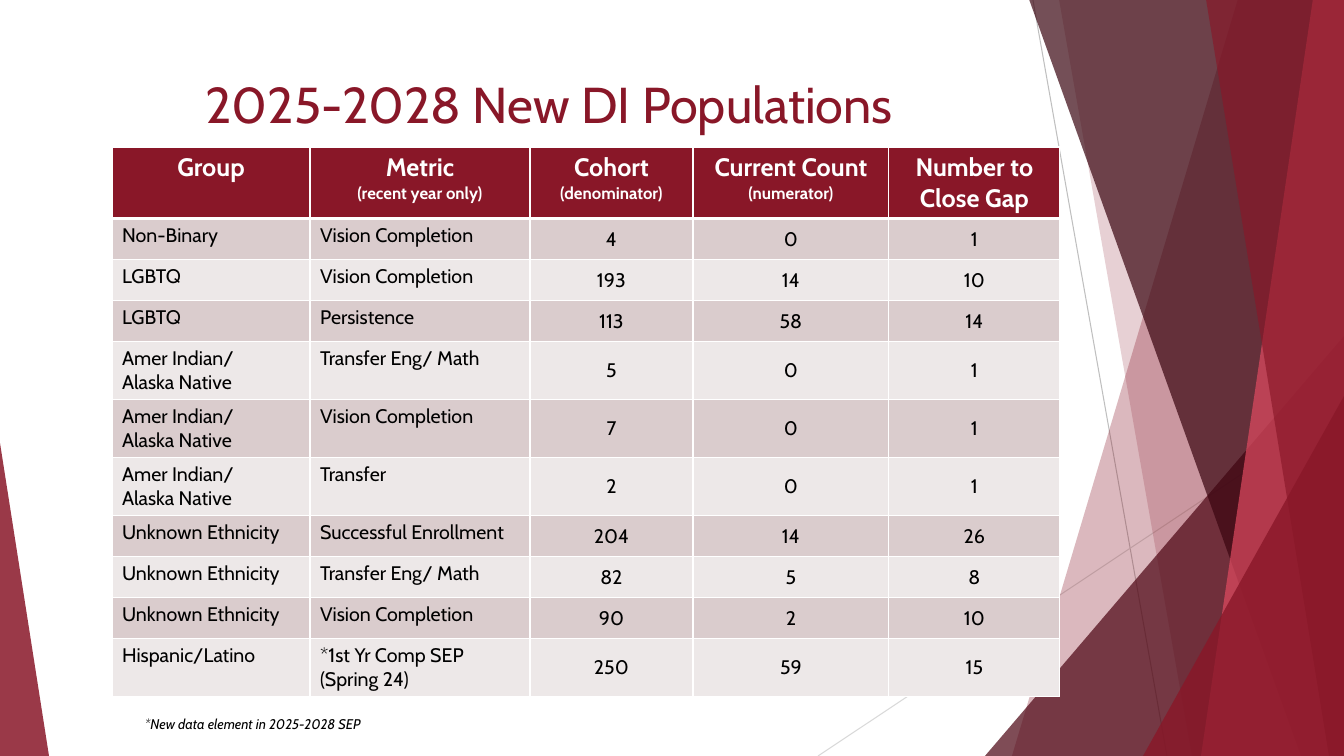
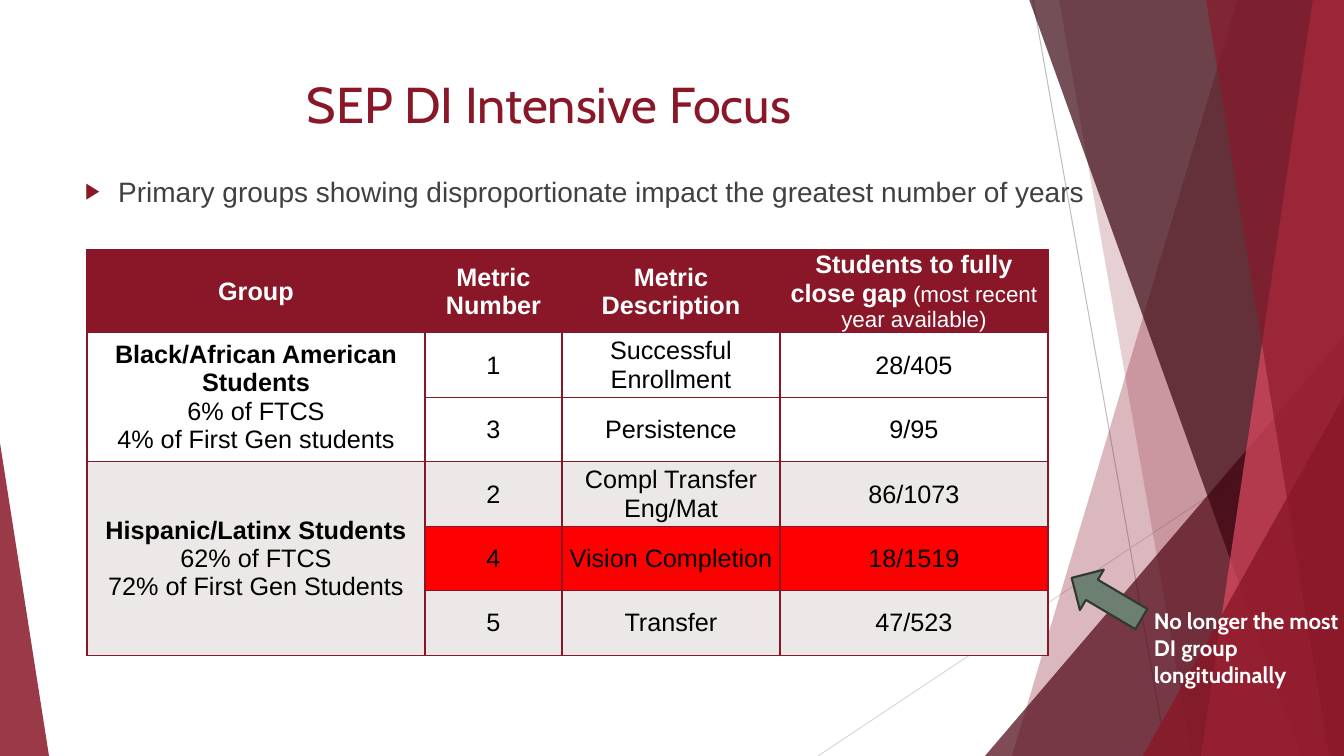
"""Build two slides on the 2025-2028 disproportionate impact (DI) populations."""
import dataclasses

import pptx
import pptx.dml.color
import pptx.enum.shapes
import pptx.enum.text
import pptx.oxml
import pptx.oxml.ns
import pptx.util

WIDTH, HEIGHT = 1344, 756
PX = 12192000 / WIDTH
COLORS = {
    "maroon": "891728", "wine": "4E0715", "plum": "3A0510", "rose": "E14B61",
    "white": "FFFFFF", "black": "000000", "body": "404040", "alert": "FF0000",
    "band_dark": "DACCCD", "band_light": "EDE8E8", "line": "BFBFBF", "pale_line": "D9D9D9",
    "arrow": "6D7F71", "arrow_edge": "303832",
}
CENTER = pptx.enum.text.PP_ALIGN.CENTER
LEFT = pptx.enum.text.PP_ALIGN.LEFT
TOP = pptx.enum.text.MSO_ANCHOR.TOP
MIDDLE = pptx.enum.text.MSO_ANCHOR.MIDDLE


@dataclasses.dataclass(frozen=True)
class Style:
    """Character formatting of a run."""
    size: int
    color: str = "black"
    bold: bool = False
    italic: bool = False
    font: str = "Cabin"


TITLE = Style(36, "maroon")
BULLET = Style(20, "body", font="Arial")
HEADER = Style(18, "white", bold=True)
HEADER_NOTE = dataclasses.replace(HEADER, size=12)
CELL = Style(14)
FOCUS_HEADER = dataclasses.replace(HEADER, font="Arial")
FOCUS_NOTE = Style(16, "white", font="Arial")
FOCUS_CELL = Style(18, font="Arial")
FOCUS_GROUP = dataclasses.replace(FOCUS_CELL, bold=True)

POPULATION_HEADERS = [
    ("Group", None), ("Metric", "(recent year only)"), ("Cohort", "(denominator)"),
    ("Current Count", "(numerator)"), ("Number to Close Gap", None),
]
POPULATIONS = [
    ("Non-Binary", "Vision Completion", 4, 0, 1),
    ("LGBTQ", "Vision Completion", 193, 14, 10),
    ("LGBTQ", "Persistence", 113, 58, 14),
    ("Amer Indian/\nAlaska Native", "Transfer Eng/ Math", 5, 0, 1),
    ("Amer Indian/\nAlaska Native", "Vision Completion", 7, 0, 1),
    ("Amer Indian/\nAlaska Native", "Transfer", 2, 0, 1),
    ("Unknown Ethnicity", "Successful Enrollment", 204, 14, 26),
    ("Unknown Ethnicity", "Transfer Eng/ Math", 82, 5, 8),
    ("Unknown Ethnicity", "Vision Completion", 90, 2, 10),
    ("Hispanic/Latino", "*1st Yr Comp SEP (Spring 24)", 250, 59, 15),
]
FOCUS_HEADERS = ["Group", "Metric Number", "Metric Description", "Students to fully close gap"]
FOCUS_GROUPS = [
    ("Black/African American Students", "6% of FTCS\n4% of First Gen students", None, [
        ("1", "Successful Enrollment", "28/405"),
        ("3", "Persistence", "9/95"),
    ]),
    ("Hispanic/Latinx Students", "62% of FTCS\n72% of First Gen Students", "band_light", [
        ("2", "Compl Transfer Eng/Mat", "86/1073"),
        ("4", "Vision Completion", "18/1519"),
        ("5", "Transfer", "47/523"),
    ]),
]


def px(value):
    """Turn px into EMU."""
    return pptx.util.Emu(round(value * PX))


def box(*values):
    """Turn a left, top, width, height box into EMU."""
    return [px(value) for value in values]


def rgb(name):
    """Look up a colour."""
    return pptx.dml.color.RGBColor.from_string(COLORS[name])


def sub_element(parent, tag, **attributes):
    """Append a DrawingML child."""
    child = pptx.oxml.parse_xml(f"<{tag} {pptx.oxml.ns.nsdecls('a')}/>")
    for name, value in attributes.items():
        child.set(name, str(value))
    parent.append(child)
    return child


def write_paragraph(paragraph, runs, alignment=LEFT):
    """Write styled runs, turning newlines into line breaks."""
    paragraph.alignment = alignment
    for text, style in runs:
        for index, line in enumerate(text.split("\n")):
            if index:
                paragraph.add_line_break()
            if not line:
                continue
            run = paragraph.add_run()
            run.text = line
            run.font.name = style.font
            run.font.size = pptx.util.Pt(style.size)
            run.font.bold = style.bold
            run.font.italic = style.italic
            run.font.color.rgb = rgb(style.color)


def paint(shape, color, opacity=100):
    """Give a shape a flat fill without line or shadow."""
    shape.shadow.inherit = False
    shape.fill.solid()
    shape.fill.fore_color.rgb = rgb(color)
    shape.line.fill.background()
    if opacity < 100:
        fill = shape.element.xpath("./p:spPr/a:solidFill/a:srgbClr")[0]
        sub_element(fill, "a:alpha", val=opacity * 1000)
    return shape


def add_line(slide, start, end, color):
    """Add a thin straight line."""
    line = slide.shapes.add_connector(
        pptx.enum.shapes.MSO_CONNECTOR.STRAIGHT, *box(*start, *end))
    line.line.color.rgb = rgb(color)
    line.line.width = pptx.util.Pt(0.75)
    sub_element(line.element.spPr, "a:effectLst")
    return line


def add_band(slide, points, color, opacity):
    """Add a translucent polygon."""
    builder = slide.shapes.build_freeform(*points[0], scale=PX)
    builder.add_line_segments(points[1:], close=True)
    return paint(builder.convert_to_shape(), color, opacity)


def add_triangle(slide, bounds, apex, color, opacity):
    """Add a translucent triangle with its apex at a share of its width."""
    triangle = slide.shapes.add_shape(
        pptx.enum.shapes.MSO_SHAPE.ISOSCELES_TRIANGLE, *box(*bounds))
    triangle.adjustments[0] = apex
    return paint(triangle, color, opacity)


def decorate_master(presentation, slide):
    """Draw the shared facets and move them behind the master's placeholders."""
    def edge_band(top, bottom, color, opacity):
        points = [(top, -1), (WIDTH, -1), (WIDTH, HEIGHT), (bottom, HEIGHT)]
        return add_band(slide, points, color, opacity)

    facets = [
        add_line(slide, (1033, 0), (1167, HEIGHT), "line"),
        add_line(slide, (WIDTH, 406), (818, HEIGHT), "pale_line"),
        edge_band(1238, 1012, "maroon", 30),
        edge_band(1059, 1192, "maroon", 20),
        add_triangle(slide, (985, 336, 359, 420), 1, "wine", 72),
        edge_band(1029, 1301, "plum", 70),
        edge_band(1313, 1201, "rose", 70),
        edge_band(1206, 1329, "maroon", 65),
        add_triangle(slide, (1143, 396, 201, 360), 1, "maroon", 80),
        add_triangle(slide, (0, 443, 49, 313), 0, "maroon", 85),
    ]
    tree = presentation.slide_master.shapes.element
    for index, facet in enumerate(facets):
        facet.element.xpath(".//p:cNvPr")[0].set("id", str(100 + index))
        tree.insert(2 + index, facet.element)


def place_text(shape, bounds, runs, alignment=LEFT):
    """Position a text shape and write its only paragraph."""
    shape.left, shape.top, shape.width, shape.height = box(*bounds)
    frame = shape.text_frame
    frame.word_wrap = True
    frame.auto_size = pptx.enum.text.MSO_AUTO_SIZE.NONE
    frame.vertical_anchor = TOP
    write_paragraph(frame.paragraphs[0], runs, alignment)


def add_note(slide, bounds, text, style):
    """Add a wrapped text box."""
    place_text(slide.shapes.add_textbox(*box(*bounds)), bounds, [(text, style)])


def set_title(slide, text):
    """Fill the title placeholder."""
    place_text(slide.shapes.title, (75, 68, 948, 145), [(text, TITLE)], CENTER)


def set_bullet(placeholder, bounds, text):
    """Fill the body placeholder with one arrow-bulleted line."""
    paragraph = placeholder.text_frame.paragraphs[0]
    properties = paragraph._p.get_or_add_pPr()
    properties.set("marL", str(px(33)))
    properties.set("indent", str(px(-33)))
    sub_element(sub_element(properties, "a:buClr"), "a:srgbClr", val=COLORS["maroon"])
    sub_element(properties, "a:buSzPct", val=80000)
    sub_element(properties, "a:buFont", typeface="Arial")
    sub_element(properties, "a:buChar", char="▶")
    place_text(placeholder, bounds, [(text, BULLET)])
    paragraph.space_before = pptx.util.Pt(0)


def add_table(slide, left, top, columns, rows):
    """Add an unbanded table from column widths and row heights."""
    frame = slide.shapes.add_table(
        len(rows), len(columns), *box(left, top, sum(columns), sum(rows)))
    table = frame.table
    table.first_row = table.horz_banding = False
    for column, width in zip(table.columns, columns):
        column.width = px(width)
    for row, height in zip(table.rows, rows):
        row.height = px(height)
    return table


def format_cell(cell, fill, border, top=1, bottom=1):
    """Set the borders and the fill of a cell."""
    properties = cell._tc.get_or_add_tcPr()
    for side, width in (("L", 1), ("R", 1), ("T", top), ("B", bottom)):
        line = sub_element(properties, f"a:ln{side}", w=pptx.util.Pt(width))
        sub_element(sub_element(line, "a:solidFill"), "a:srgbClr", val=COLORS[border])
    if fill:
        cell.fill.solid()
        cell.fill.fore_color.rgb = rgb(fill)
    else:
        cell.fill.background()


def write_cell(cell, paragraphs, alignment=CENTER, anchor=MIDDLE):
    """Write paragraphs of runs into a cell."""
    cell.vertical_anchor = anchor
    frame = cell.text_frame
    for index, runs in enumerate(paragraphs):
        paragraph = frame.add_paragraph() if index else frame.paragraphs[0]
        write_paragraph(paragraph, runs, alignment)


def add_population_table(slide):
    """Add the table of new populations."""
    heights = [70] + [41] * 3 + [58] * 3 + [41] * 3 + [58]
    table = add_table(slide, 112, 147, [198, 220, 163, 196, 171], heights)
    for column, (label, note) in enumerate(POPULATION_HEADERS):
        cell = table.cell(0, column)
        format_cell(cell, "maroon", "white", bottom=3)
        paragraphs = [[(label, HEADER)]] + ([[(note, HEADER_NOTE)]] if note else [])
        write_cell(cell, paragraphs, anchor=TOP)
    for row, values in enumerate(POPULATIONS, 1):
        for column, value in enumerate(values):
            cell = table.cell(row, column)
            format_cell(cell, "band_dark" if row % 2 else "band_light", "white",
                        top=3 if row == 1 else 1)
            placing = (LEFT, TOP) if column < 2 else (CENTER, MIDDLE)
            write_cell(cell, [[(line, CELL)] for line in str(value).split("\n")], *placing)


def add_focus_table(slide):
    """Add the table of groups in intensive focus."""
    table = add_table(slide, 87, 250, [338, 137, 218, 268], [81, 65, 64, 65, 64, 65])

    def fill_cell(row, column, runs, fill):
        cell = table.cell(row, column)
        cell.margin_left = cell.margin_right = cell.margin_top = px(1)
        cell.margin_bottom = 0
        format_cell(cell, fill, "maroon")
        write_cell(cell, [runs])

    for column, label in enumerate(FOCUS_HEADERS):
        runs = [(label, FOCUS_HEADER)]
        if column == 3:
            runs.append((" (most recent year available)", FOCUS_NOTE))
        fill_cell(0, column, runs, "maroon")
    first = 1
    for group, shares, fill, metrics in FOCUS_GROUPS:
        last = first + len(metrics) - 1
        table.cell(first, 0).merge(table.cell(last, 0))
        for row, metric in enumerate(metrics, first):
            runs = [(group + "\n", FOCUS_GROUP), (shares, FOCUS_CELL)] if row == first else []
            fill_cell(row, 0, runs, fill)
            for column, text in enumerate(metric, 1):
                fill_cell(row, column, [(text, FOCUS_CELL)],
                          "alert" if metric[0] == "4" else fill)
        first = last + 1


def add_callout_arrow(slide):
    """Add the arrow pointing at the highlighted row."""
    arrow = slide.shapes.add_shape(
        pptx.enum.shapes.MSO_SHAPE.DOWN_ARROW, *box(1083, 558, 47, 81))
    arrow.rotation = 120.6
    paint(arrow, "arrow")
    arrow.line.color.rgb = rgb("arrow_edge")
    arrow.line.width = pptx.util.Pt(1.5)


def main():
    """Build and save the presentation."""
    presentation = pptx.Presentation()
    presentation.slide_width, presentation.slide_height = px(WIDTH), px(HEIGHT)
    layouts = presentation.slide_layouts

    populations = presentation.slides.add_slide(layouts.get_by_name("Title Only"))
    decorate_master(presentation, populations)
    set_title(populations, "2025-2028 New DI Populations")
    add_population_table(populations)
    add_note(populations, (135, 711, 302, 27), "*New data element in 2025-2028 SEP",
             Style(10, italic=True))

    focus = presentation.slides.add_slide(layouts.get_by_name("Title and Content"))
    set_title(focus, "SEP DI Intensive Focus")
    set_bullet(focus.placeholders[1], (75, 169, 1216, 90),
               "Primary groups showing disproportionate impact the greatest number of years")
    add_focus_table(focus)
    add_callout_arrow(focus)
    add_note(focus, (1144, 602, 213, 92), "No longer the most DI group longitudinally",
             Style(16, "white", bold=True))
    presentation.save("out.pptx")


if __name__ == "__main__":
    main()
